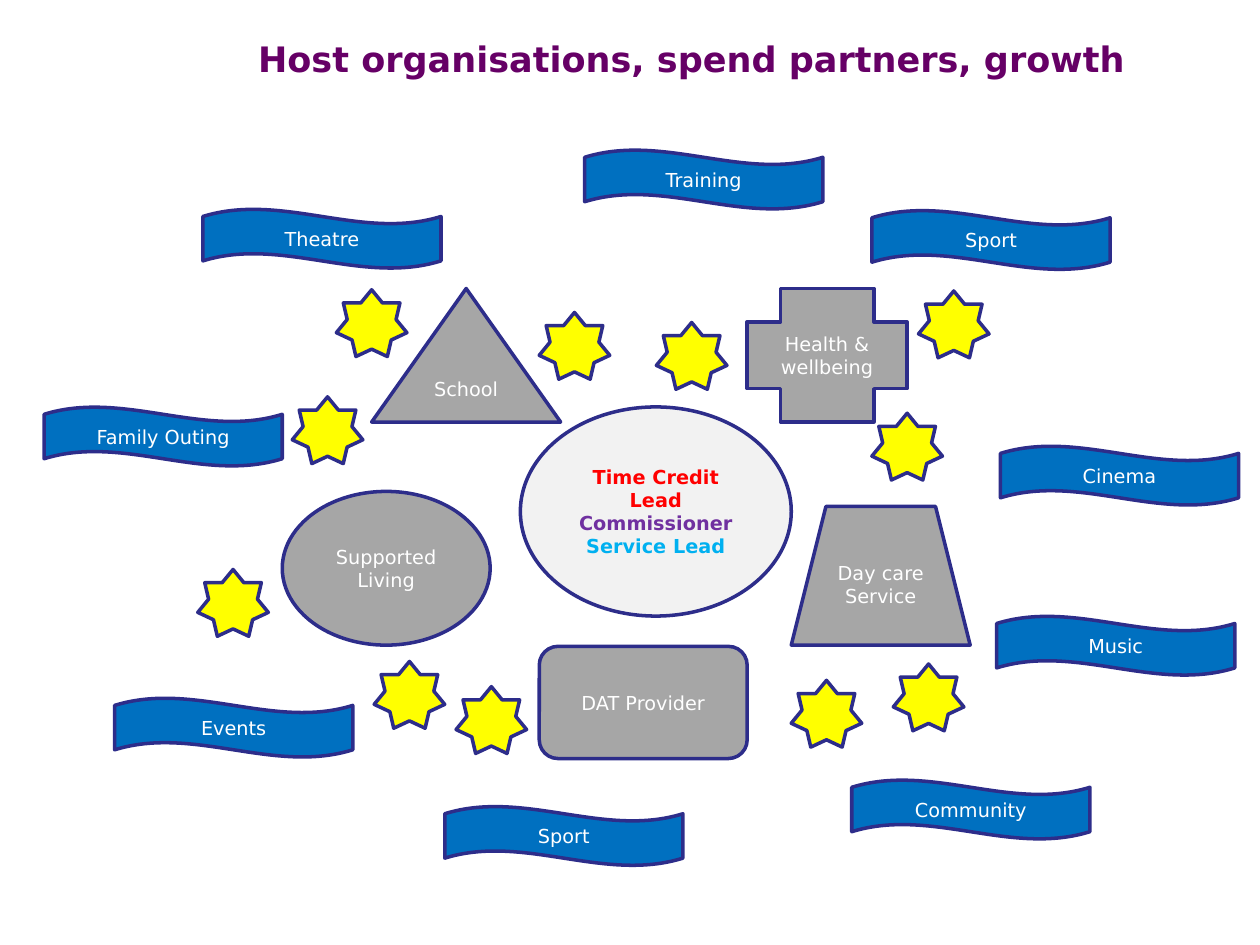
import pptx
import pptx.util
from pptx.dml.color import RGBColor
from pptx.enum.shapes import MSO_SHAPE
from pptx.enum.text import MSO_ANCHOR, PP_ALIGN
from pptx.util import Inches

FONT = "DejaVu Sans"
COLORS = {
    "outline": "2D2D8A",
    "hub": "F2F2F2",
    "host": "A6A6A6",
    "partner": "0070C0",
    "star": "FFFF00",
    "label": "FFFFFF",
    "title": "660066",
    "credit lead": "FF0000",
    "commissioner": "7030A0",
    "service lead": "00B0F0",
}
PARTNER_SIZE = (1.89, 0.47)
STAR_SIZE = (0.56, 0.53)

ROLES = [
    ("Time Credit Lead", "credit lead"),
    ("Commissioner", "commissioner"),
    ("Service Lead", "service lead"),
]
HOSTS = [
    ("School", MSO_SHAPE.ISOSCELES_TRIANGLE, (2.95, 2.29, 1.5, 1.06)),
    ("Health & wellbeing", MSO_SHAPE.CROSS, (5.93, 2.29, 1.27, 1.06)),
    ("Day care Service", MSO_SHAPE.TRAPEZOID, (6.28, 4.02, 1.42, 1.1)),
    ("Supported Living", MSO_SHAPE.OVAL, (2.24, 3.9, 1.65, 1.22)),
    ("DAT Provider", MSO_SHAPE.ROUNDED_RECTANGLE, (4.28, 5.13, 1.65, 0.89)),
]
PARTNERS = [
    ("Theatre", (1.61, 1.66)),
    ("Family Outing", (0.35, 3.23)),
    ("Training", (4.64, 1.19)),
    ("Sport", (6.92, 1.67)),
    ("Cinema", (7.94, 3.54)),
    ("Community", (6.76, 6.19)),
    ("Events", (0.91, 5.54)),
    ("Music", (7.91, 4.89)),
    ("Sport", (3.53, 6.4)),
]
STARS = [
    (4.28, 2.48), (5.21, 2.56), (6.92, 3.28), (7.09, 5.27),
    (6.28, 5.4), (3.62, 5.45), (2.97, 5.25), (1.57, 4.52),
    (2.32, 3.15), (2.67, 2.3), (7.29, 2.31),
]


def rgb(name):
    return RGBColor.from_string(COLORS[name])


def set_font(para, size, color, bold=False):
    para.font.name = FONT
    para.font.size = pptx.util.Pt(size)
    para.font.bold = bold
    para.font.color.rgb = rgb(color)


def add_outlined_shape(page, kind, bounds, fill):
    shape = page.shapes.add_shape(kind, *map(Inches, bounds))
    shape.shadow.inherit = False
    shape.fill.solid()
    shape.fill.fore_color.rgb = rgb(fill)
    shape.line.color.rgb = rgb("outline")
    shape.line.width = pptx.util.Pt(2)
    return shape


def write_lines(shape, lines, bold=False):
    """Centre (text, colour) lines in the shape, one paragraph each."""
    frame = shape.text_frame
    frame.word_wrap = True
    frame.vertical_anchor = MSO_ANCHOR.MIDDLE
    frame.text = "\n".join(text for text, _ in lines)
    for para, (_, color) in zip(frame.paragraphs, lines):
        para.alignment = PP_ALIGN.CENTER
        set_font(para, 11, color, bold)


def add_labelled_shape(page, kind, bounds, fill, label):
    shape = add_outlined_shape(page, kind, bounds, fill)
    write_lines(shape, [(label, "label")])


def add_title(page, text):
    box = page.shapes.add_textbox(*map(Inches, (1.95, 0.25, 9, 1.25)))
    box.text_frame.word_wrap = True
    para = box.text_frame.paragraphs[0]
    para.text = text
    set_font(para, 20, "title", bold=True)


def main():
    deck = pptx.Presentation()
    deck.slide_width, deck.slide_height = Inches(10), Inches(7.5)
    page = deck.slides.add_slide(deck.slide_layouts[6])

    hub = add_outlined_shape(page, MSO_SHAPE.OVAL, (4.13, 3.23, 2.15, 1.66), "hub")
    write_lines(hub, ROLES, bold=True)
    for label, kind, bounds in HOSTS:
        add_labelled_shape(page, kind, bounds, "host", label)
    for label, corner in PARTNERS:
        add_labelled_shape(page, MSO_SHAPE.WAVE, corner + PARTNER_SIZE, "partner", label)
    for corner in STARS:
        add_outlined_shape(page, MSO_SHAPE.STAR_7_POINT, corner + STAR_SIZE, "star")
    add_title(page, "Host organisations, spend partners, growth")

    deck.save("out.pptx")


if __name__ == "__main__":
    main()
